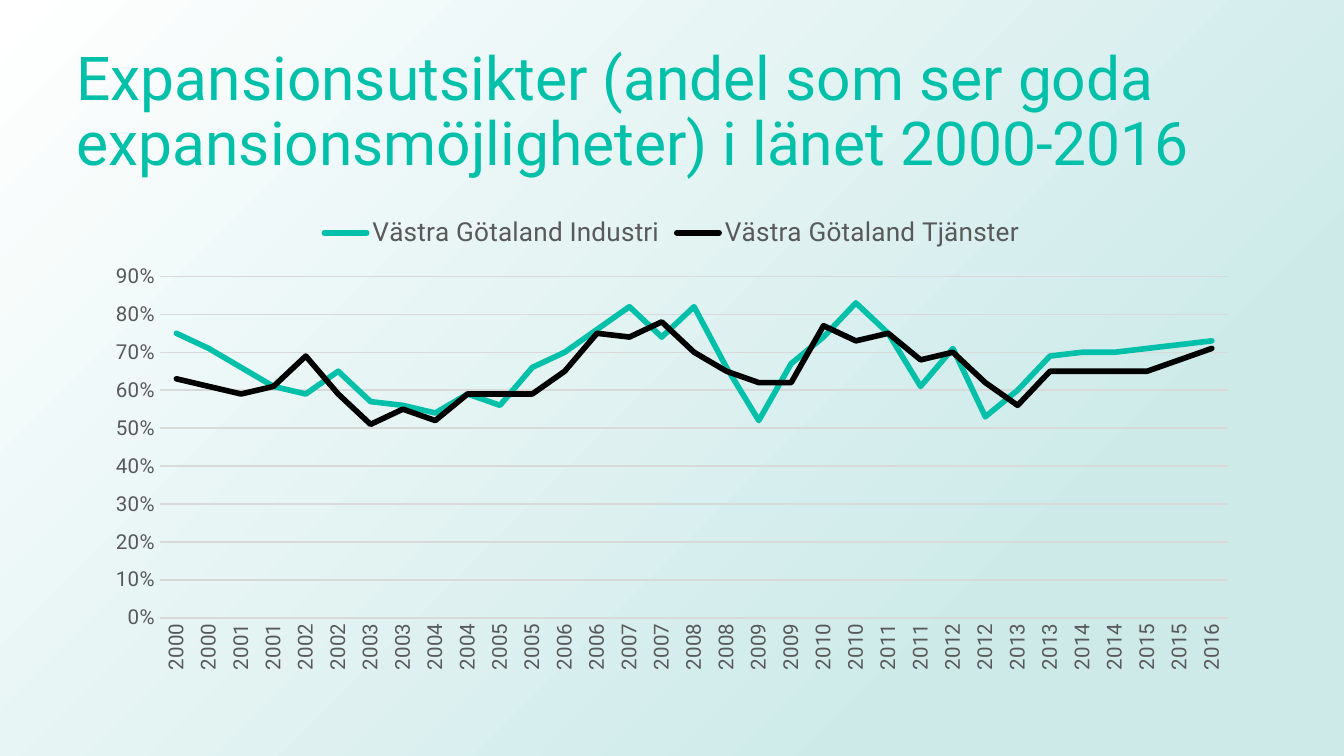
from dataclasses import dataclass

import pptx
import pptx.chart.data
import pptx.dml.color
import pptx.enum.chart
import pptx.enum.shapes
import pptx.enum.text
import pptx.oxml
import pptx.oxml.ns
import pptx.util

Pt = pptx.util.Pt
COLOURS = {
    "teal": "00C0A9",
    "black": "000000",
    "label": "595959",
    "grid": "D9D9D9",
    "mint": "CDEAE9",
    "white": "FFFFFF",
}
FONT = "Roboto"
WIDTH, HEIGHT = 720, 405


@dataclass
class LineSeries:
    name: str
    colour: str
    percents: list[int]


SERIES = [
    LineSeries("Västra Götaland Industri", "teal", [
        75, 71, 66, 61, 59, 65, 57, 56, 54, 59, 56, 66, 70, 76, 82, 74, 82,
        66, 52, 67, 74, 83, 75, 61, 71, 53, 60, 69, 70, 70, 71, 72, 73]),
    LineSeries("Västra Götaland Tjänster", "black", [
        63, 61, 59, 61, 69, 59, 51, 55, 52, 59, 59, 59, 65, 75, 74, 78, 70,
        65, 62, 62, 77, 73, 75, 68, 70, 62, 56, 65, 65, 65, 65, 68, 71]),
]


def rgb(colour: str) -> pptx.dml.color.RGBColor:
    return pptx.dml.color.RGBColor.from_string(COLOURS[colour])


def style_font(font, size: float, colour: str) -> None:
    font.name = FONT
    font.size = Pt(size)
    font.bold = False
    font.color.rgb = rgb(colour)


def style_line(line, colour: str, width: float) -> None:
    line.color.rgb = rgb(colour)
    line.width = Pt(width)


def add_backdrop(page) -> None:
    """Cover the page with a gradient spreading from the bottom right corner."""
    backdrop = page.shapes.add_shape(
        pptx.enum.shapes.MSO_SHAPE.RECTANGLE, 0, 0, Pt(WIDTH), Pt(HEIGHT))
    backdrop.shadow.inherit = False
    backdrop.line.fill.background()
    backdrop.fill.background()
    gradient = pptx.oxml.parse_xml(
        f'<a:gradFill {pptx.oxml.ns.nsdecls("a")} rotWithShape="1"><a:gsLst>'
        f'<a:gs pos="23000"><a:srgbClr val="{COLOURS["mint"]}"/></a:gs>'
        f'<a:gs pos="100000"><a:srgbClr val="{COLOURS["white"]}"/></a:gs>'
        '</a:gsLst><a:path path="circle"><a:fillToRect l="100000" t="100000"/>'
        '</a:path></a:gradFill>')
    properties = backdrop.element.spPr
    properties.replace(properties.find(pptx.oxml.ns.qn("a:noFill")), gradient)


def add_text(page, text: str, *, left: float, top: float, width: float,
             height: float, size: float, colour: str, spacing: float) -> None:
    box = page.shapes.add_textbox(Pt(left), Pt(top), Pt(width), Pt(height))
    frame = box.text_frame
    frame.word_wrap = True
    frame.vertical_anchor = pptx.enum.text.MSO_ANCHOR.MIDDLE
    para = frame.paragraphs[0]
    para.line_spacing = spacing
    span = para.add_run()
    span.text = text
    style_font(span.font, size, colour)


def add_line_chart(page, series: list[LineSeries], *, left: float, top: float,
                   width: float, height: float) -> None:
    data = pptx.chart.data.CategoryChartData(number_format="0%")
    # Two surveys a year, from 2000 on
    data.categories = [str(2000 + i // 2) for i in range(len(series[0].percents))]
    for item in series:
        data.add_series(item.name, [value / 100 for value in item.percents])
    chart = page.shapes.add_chart(
        pptx.enum.chart.XL_CHART_TYPE.LINE, Pt(left), Pt(top), Pt(width),
        Pt(height), data).chart
    chart.has_title = False
    style_font(chart.font, 11, "label")

    # Legend
    chart.has_legend = True
    chart.legend.position = pptx.enum.chart.XL_LEGEND_POSITION.TOP
    chart.legend.include_in_layout = False
    style_font(chart.legend.font, 14, "label")

    # Axes
    for axis in (chart.category_axis, chart.value_axis):
        axis.major_tick_mark = pptx.enum.chart.XL_TICK_MARK.NONE
        axis.minor_tick_mark = pptx.enum.chart.XL_TICK_MARK.NONE
        style_font(axis.tick_labels.font, 11, "label")
    style_line(chart.category_axis.format.line, "grid", 0.75)
    labels = chart.category_axis.tick_labels.font
    chart.category_axis._element.txPr.bodyPr.set("rot", "-5400000")
    labels.bold = False
    values = chart.value_axis
    values.minimum_scale, values.maximum_scale, values.major_unit = 0, 0.9, 0.1
    values.tick_labels.number_format = "0%"
    values.tick_labels.number_format_is_linked = False
    values.format.line.fill.background()
    values.has_major_gridlines = True
    style_line(values.major_gridlines.format.line, "grid", 0.75)

    # Series lines
    chart.plots[0].vary_by_categories = False
    for drawn, item in zip(chart.plots[0].series, series):
        drawn.smooth = False
        drawn.marker.style = pptx.enum.chart.XL_MARKER_STYLE.NONE
        style_line(drawn.format.line, item.colour, 3)
        drawn.format.line._get_or_add_ln().set("cap", "rnd")


def main() -> None:
    deck = pptx.Presentation()
    deck.slide_width, deck.slide_height = Pt(WIDTH), Pt(HEIGHT)
    page = deck.slides.add_slide(deck.slide_layouts[6])
    add_backdrop(page)
    add_text(page, "Expansionsutsikter (andel som ser goda "
             "expansionsmöjligheter) i länet 2000-2016",
             left=34, top=21.6, width=637, height=78.5,
             size=32.4, colour="teal", spacing=0.9)
    add_line_chart(page, SERIES, left=49.7, top=108, width=620.6, height=256.3)
    deck.save("out.pptx")


if __name__ == "__main__":
    main()
